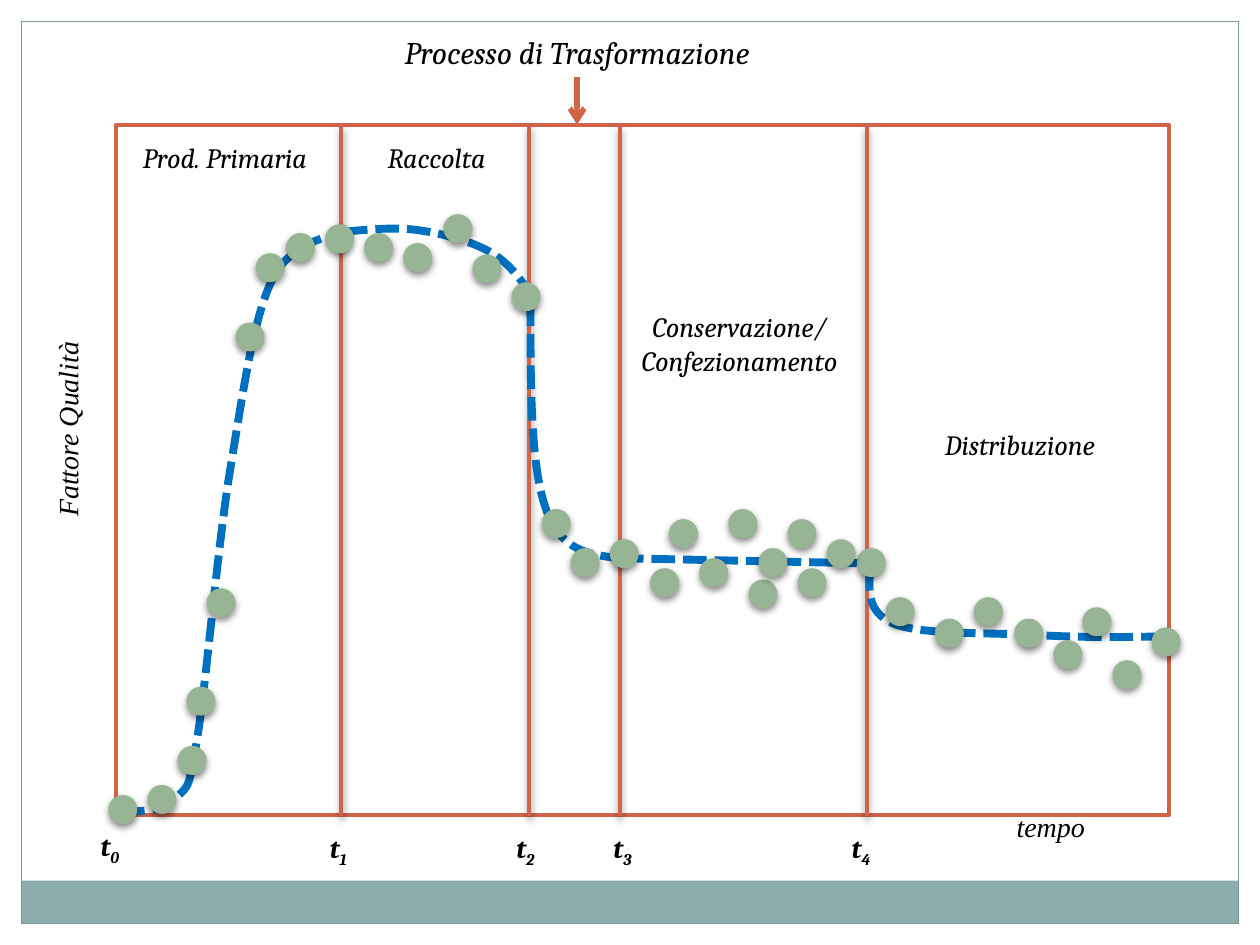
from lxml import etree
from pptx import Presentation
from pptx.dml.color import RGBColor
from pptx.enum.dml import MSO_LINE
from pptx.enum.shapes import MSO_CONNECTOR, MSO_SHAPE
from pptx.enum.text import MSO_ANCHOR, PP_ALIGN
from pptx.oxml.ns import qn
from pptx.util import Inches, Pt

RECT, OVAL = MSO_SHAPE.RECTANGLE, MSO_SHAPE.OVAL
STRAIGHT, DASH = MSO_CONNECTOR.STRAIGHT, MSO_LINE.SQUARE_DOT
LEFT, CENTER, TOP = PP_ALIGN.LEFT, PP_ALIGN.CENTER, MSO_ANCHOR.TOP

COLORS = {"white": "FFFFFF", "band": "8CADAE", "border": "7C999A", "frame": "D16349",
          "curve": "0070C0", "dot": "97B595", "text": "000000"}
SERIF, SANS = "Cambria", "Times New Roman"
W, H = 10, 7.5
MARGIN = 0.17
BAND_H = 0.34
FRAME = (0.92, 0.99, 8.36, 5.48)
DIVIDERS = [2.71, 4.2, 4.92, 6.88]
DIVIDER_TOP, DIVIDER_BOTTOM = 1.01, 6.48
DOT = 0.23

TITLE = ("Processo di Trasformazione", (0.83, 0.21, 7.5, 0.4))
PHASES = [
    ("Raccolta", (2.81, 1.07, 1.31, 0.64), None),
    ("Prod. Primaria", (1.02, 1.07, 1.53, 0.64), "white"),
    ("Conservazione/ Confezionamento", (4.84, 2.41, 2.06, 0.91), None),
    ("Distribuzione", (6.97, 3.34, 2.25, 0.91), None),
]
AXES = [("Fattore Qualità", (-0.27, 3.21, 1.61, 0.37), 270),
        ("tempo", (7.97, 6.38, 0.75, 0.37), 0)]
TIMES = [(0.7, 6.53, 0.4), (2.52, 6.54, 0.37), (4, 6.54, 0.39), (4.77, 6.54, 0.39),
         (6.66, 6.54, 0.39)]

CURVES = [
    [(2.73, 1.84), (2.94, 1.82), (3.15, 1.8), (3.34, 1.83), (3.54, 1.86), (3.75, 1.92),
     (3.89, 2), (4.03, 2.08), (4.11, 2.19), (4.19, 2.3)],
    [(4.21, 2.4), (4.21, 3.05), (4.21, 3.69), (4.33, 4.03), (4.44, 4.37), (4.67, 4.4),
     (4.9, 4.43)],
    [(6.91, 4.5), (6.89, 4.68), (6.88, 4.86), (7.09, 4.95), (7.31, 5.04), (7.85, 5.02),
     (8.21, 5.04), (8.57, 5.06), (8.91, 5.06), (9.26, 5.05)],
    [(0.96, 6.44), (1.13, 6.44), (1.3, 6.44), (1.4, 6.33), (1.5, 6.23), (1.5, 6.27),
     (1.57, 5.83), (1.64, 5.39), (1.73, 4.31), (1.83, 3.71), (1.93, 3.11), (2.01, 2.53),
     (2.16, 2.22), (2.3, 1.91), (2.71, 1.85), (2.71, 1.85)],
]
PLATEAU = ((4.92, 4.43), (6.8, 4.47))
STAGE_DOTS = [(0.86, 6.31), (2.58, 1.78), (4.06, 2.24), (4.84, 4.28), (6.8, 4.35),
              (9.14, 4.98)]
SAMPLE_DOTS = [
    (1.17, 6.23), (1.41, 5.92), (1.48, 5.45), (1.64, 4.67), (1.87, 2.56), (2.03, 2.01),
    (2.27, 1.85), (2.89, 1.85), (3.2, 1.93), (3.52, 1.7), (3.75, 2.02), (4.3, 4.04),
    (4.53, 4.35), (5.16, 4.51), (5.31, 4.12), (5.55, 4.43), (5.78, 4.04), (5.94, 4.6),
    (6.02, 4.35), (6.25, 4.12), (6.33, 4.51), (6.56, 4.28), (7.03, 4.74), (7.42, 4.91),
    (7.73, 4.74), (8.05, 4.91), (8.36, 5.08), (8.59, 4.82), (8.83, 5.24),
]


def rgb(name):
    return RGBColor.from_string(COLORS[name])


def set_line(s, color, width, dash=None):
    s.line.color.rgb = rgb(color)
    s.line.width = Pt(width)
    if dash:
        s.line.dash_style = dash


def set_effect(s, alpha=0):
    effects = etree.SubElement(s._element.spPr, qn("a:effectLst"))
    if alpha:
        shadow = etree.SubElement(effects, qn("a:outerShdw"), blurRad=str(Pt(4)),
                                  dist=str(Pt(2)), dir="5400000", rotWithShape="0")
        black = etree.SubElement(shadow, qn("a:srgbClr"), val="000000")
        etree.SubElement(black, qn("a:alpha"), val=str(alpha * 1000))


def add_shape(parent, kind, box, fill=None, line=None, width=1, alpha=0):
    s = parent.shapes.add_shape(kind, *map(Inches, box))
    if fill:
        s.fill.solid()
        s.fill.fore_color.rgb = rgb(fill)
    else:
        s.fill.background()
    if line:
        set_line(s, line, width)
    else:
        s.line.fill.background()
    set_effect(s, alpha)
    return s


def add_line(parent, start, end, color, width, dash=None, alpha=0):
    c = parent.shapes.add_connector(STRAIGHT, *map(Inches, start + end))
    set_line(c, color, width, dash)
    set_effect(c, alpha)
    return c


def add_curve(parent, points):
    start, *rest = [(Inches(x), Inches(y)) for x, y in points]
    builder = parent.shapes.build_freeform(*start)
    builder.add_line_segments(rest, close=False)
    s = builder.convert_to_shape()
    segments = list(s._element.iter(qn("a:lnTo")))
    for i in range(0, len(segments), 3):
        bezier = etree.Element(qn("a:cubicBezTo"))
        segments[i].addprevious(bezier)
        for segment in segments[i:i + 3]:
            bezier.append(segment[0])
            segment.getparent().remove(segment)
    s.fill.background()
    set_line(s, "curve", 4.5, DASH)
    set_effect(s)


def add_dots(parent, places):
    for x, y in places:
        add_shape(parent, OVAL, (x, y, DOT, DOT), "dot", alpha=45)


def write(s, runs, font=SERIF, size=16, bold=False, align=CENTER, wrap=True):
    tf = s.text_frame
    tf.word_wrap = wrap
    tf.vertical_anchor = TOP
    p = tf.paragraphs[0]
    p.alignment = align
    for text, baseline in runs:
        r = p.add_run()
        r.text = text
        f = r.font
        f.name, f.size, f.bold, f.italic = font, Pt(size), bold, True
        f.color.rgb = rgb("text")
        if baseline:
            r._r.get_or_add_rPr().set("baseline", str(baseline * 1000))


def add_text(parent, box, runs, **style):
    s = parent.shapes.add_textbox(*map(Inches, box))
    write(s, runs, **style)
    return s


def main():
    prs = Presentation()
    prs.slide_width, prs.slide_height = Inches(W), Inches(H)
    slide = prs.slides.add_slide(prs.slide_layouts[5])
    inner_w, inner_h = W - 2 * MARGIN, H - 2 * MARGIN

    for box in [(0, 0, W, MARGIN), (W - MARGIN, 0, MARGIN, H), (0, 0, MARGIN, H)]:
        add_shape(slide, RECT, box, "white")
    add_shape(slide, RECT, (MARGIN, H - MARGIN - BAND_H, inner_w, BAND_H), "band")
    add_shape(slide, RECT, (MARGIN, MARGIN, inner_w, inner_h), line="border", width=0.75)

    add_shape(slide, RECT, FRAME, "white", "frame", 2.25)
    for x in DIVIDERS:
        add_line(slide, (x, DIVIDER_TOP), (x, DIVIDER_BOTTOM), "frame", 2.25, alpha=35)

    trend = slide.shapes.add_group_shape()
    for points in CURVES:
        add_curve(trend, points)
    add_line(trend, *PLATEAU, "curve", 4.5, DASH)

    for text, box, angle in AXES:
        s = add_text(slide, box, [(text, 0)], font=SANS, align=LEFT, wrap=False)
        s.rotation = angle
    add_dots(slide, STAGE_DOTS)
    for text, box, fill in PHASES:
        if fill:
            write(add_shape(slide, RECT, box, fill), [(text, 0)])
        else:
            add_text(slide, box, [(text, 0)])
    add_dots(slide, SAMPLE_DOTS)
    for i, (x, y, width) in enumerate(TIMES):
        add_text(slide, (x, y, width, 0.37), [("t", 0), (str(i), -25)],
                 bold=True, align=LEFT, wrap=False)

    text, box = TITLE
    title = slide.shapes.title
    title.left, title.top, title.width, title.height = map(Inches, box)
    write(title, [(text, 0)], size=18)
    x, y, width, height = box
    center = x + width / 2
    arrow = add_line(slide, (center, y + height), (center, FRAME[1]), "frame", 3)
    arrow.begin_connect(title, 2)
    etree.SubElement(arrow.line._get_or_add_ln(), qn("a:tailEnd"), type="arrow")

    prs.save("out.pptx")


if __name__ == "__main__":
    main()
